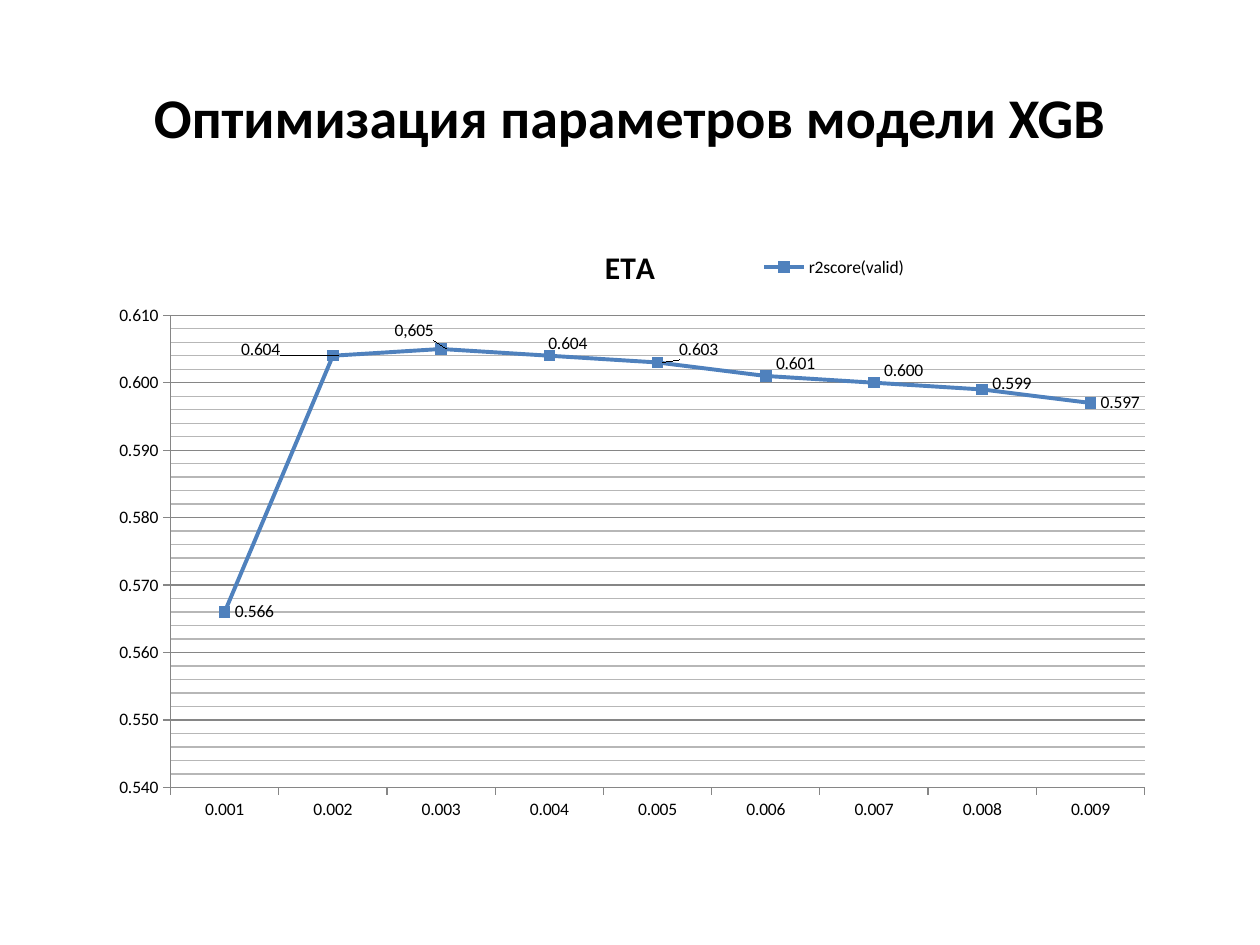
from copy import deepcopy
from dataclasses import dataclass
from typing import Any

from lxml.etree import SubElement
from pptx import Presentation
from pptx.chart.data import CategoryChartData
from pptx.dml.color import RGBColor
from pptx.enum.chart import XL_CHART_TYPE as ChartType
from pptx.enum.chart import XL_LABEL_POSITION as LabelPosition
from pptx.enum.chart import XL_LEGEND_POSITION as LegendPosition
from pptx.enum.chart import XL_MARKER_STYLE as Marker
from pptx.enum.chart import XL_TICK_MARK as Tick
from pptx.enum.text import MSO_ANCHOR as Anchor
from pptx.enum.text import PP_ALIGN as Align
from pptx.oxml.ns import qn
from pptx.util import Pt

FORMAT = "0.000"
SCORES = (0.566, 0.604, 0.605, 0.604, 0.603, 0.601, 0.6, 0.599, 0.597)
LABEL_SHIFTS = {1: (-0.09, -0.01), 2: (-0.05, -0.03), 3: (-0.01, -0.02),
                4: (0.01, -0.02), 5: (0, -0.02), 6: (0, -0.02), 7: (0, -0.01)}


def color(value):
    return RGBColor.from_string(value)


def set_font(font, name, size, fill, bold=False):
    font.name, font.size, font.bold = name, Pt(size), bold
    font.color.rgb = color(fill)


def write(frame, text, align=Align.CENTER, **style):
    para = frame.paragraphs[0]
    para.alignment = align
    span = para.add_run()
    span.text = text
    set_font(span.font, **style)


def set_line(line, fill, width):
    line.color.rgb = color(fill)
    line.width = Pt(width)


def set_layout(parent, index, **values):
    for old in parent.findall(qn("c:layout")):
        parent.remove(old)
    layout = SubElement(parent, qn("c:layout"))
    parent.insert(index, layout)
    manual = SubElement(layout, qn("c:manualLayout"))
    for tag, value in values.items():
        SubElement(manual, qn(f"c:{tag}")).set("val", str(value))


@dataclass
class SlideBuilder:
    """Hold the style and the current slide, and add elements to it."""

    page: Any
    font: str = "Calibri"
    ink: str = "000000"
    accent: str = "4F81BD"
    major: str = "868686"
    minor: str = "B7B7B7"

    def style(self, size, bold=False):
        return dict(name=self.font, size=size, fill=self.ink, bold=bold)

    def title(self, text, left, top, width, height):
        box = self.page.shapes.add_textbox(Pt(left), Pt(top), Pt(width), Pt(height))
        frame = box.text_frame
        frame.word_wrap = True
        frame.vertical_anchor = Anchor.MIDDLE
        write(frame, text, **self.style(32, True))

    def line_chart(self, title, name, categories, values, left, top, width, height):
        data = CategoryChartData(number_format=FORMAT)
        data.categories = categories
        data.categories.number_format = FORMAT
        data.add_series(name, values)
        chart = self.page.shapes.add_chart(
            ChartType.LINE_MARKERS, Pt(left), Pt(top), Pt(width), Pt(height), data).chart
        set_font(chart.font, **self.style(10))
        chart.has_title = True
        write(chart.chart_title.text_frame, title, **self.style(18, True))
        chart.has_legend = True
        chart.legend.position = LegendPosition.RIGHT
        chart.legend.include_in_layout = False
        set_layout(chart.legend._element, 1, xMode="edge", yMode="edge",
                   x=0.61, y=0.05, w=0.14, h=0.05)
        plot_area = chart.element.find(".//" + qn("c:plotArea"))
        set_layout(plot_area, 0, layoutTarget="inner", xMode="edge", yMode="edge",
                   x=61.5 / width, y=54.2 / height, w=556.6 / width, h=269.8 / height)
        self.axes(chart)
        plot = chart.plots[0]
        plot.vary_by_categories = False
        self.series(plot.series[0])

    def axes(self, chart):
        for axis in (chart.category_axis, chart.value_axis):
            axis.major_tick_mark = Tick.OUTSIDE
            axis.minor_tick_mark = Tick.NONE
            axis.tick_labels.number_format = FORMAT
            axis.tick_labels.number_format_is_linked = False
            set_line(axis.format.line, self.major, 0.75)
        axis = chart.value_axis
        axis.minimum_scale, axis.maximum_scale = 0.54, 0.61
        axis.major_unit, axis.minor_unit = 0.01, 0.002
        axis.has_major_gridlines = axis.has_minor_gridlines = True
        set_line(axis.major_gridlines.format.line, self.major, 0.75)
        major_lines = chart.element.find(".//" + qn("c:majorGridlines"))
        minor_lines = chart.element.find(".//" + qn("c:minorGridlines"))
        minor_style = deepcopy(major_lines.find(qn("c:spPr")))
        minor_style.find(".//" + qn("a:srgbClr")).set("val", self.minor)
        minor_lines.append(minor_style)

    def series(self, series):
        series.smooth = False
        set_line(series.format.line, self.accent, 2.25)
        series.marker.style = Marker.SQUARE
        series.marker.size = 6
        series.marker.format.fill.solid()
        series.marker.format.fill.fore_color.rgb = color(self.accent)
        set_line(series.marker.format.line, self.accent, 0.75)
        labels = series.data_labels
        labels.show_value = True
        labels.number_format = FORMAT
        labels.number_format_is_linked = False
        labels.position = LabelPosition.RIGHT
        for index in LABEL_SHIFTS:
            series.points[index].data_label.position = LabelPosition.RIGHT
        write(series.points[2].data_label.text_frame, "0,605", **self.style(10))
        shifted = series._element.findall(".//" + qn("c:dLbl"))
        for label, (x, y) in zip(shifted, LABEL_SHIFTS.values()):
            set_layout(label, 1, x=x, y=y)


def main():
    deck = Presentation()
    deck.slide_width, deck.slide_height = Pt(720), Pt(540)
    builder = SlideBuilder(deck.slides.add_slide(deck.slide_layouts[6]))
    builder.title("Оптимизация параметров модели XGB", 36, 21.6, 648, 90)
    builder.line_chart("ETA", "r2score(valid)", [step / 1000 for step in range(1, 10)],
                       SCORES, 36, 126, 648, 356.4)
    deck.save("out.pptx")


if __name__ == "__main__":
    main()
